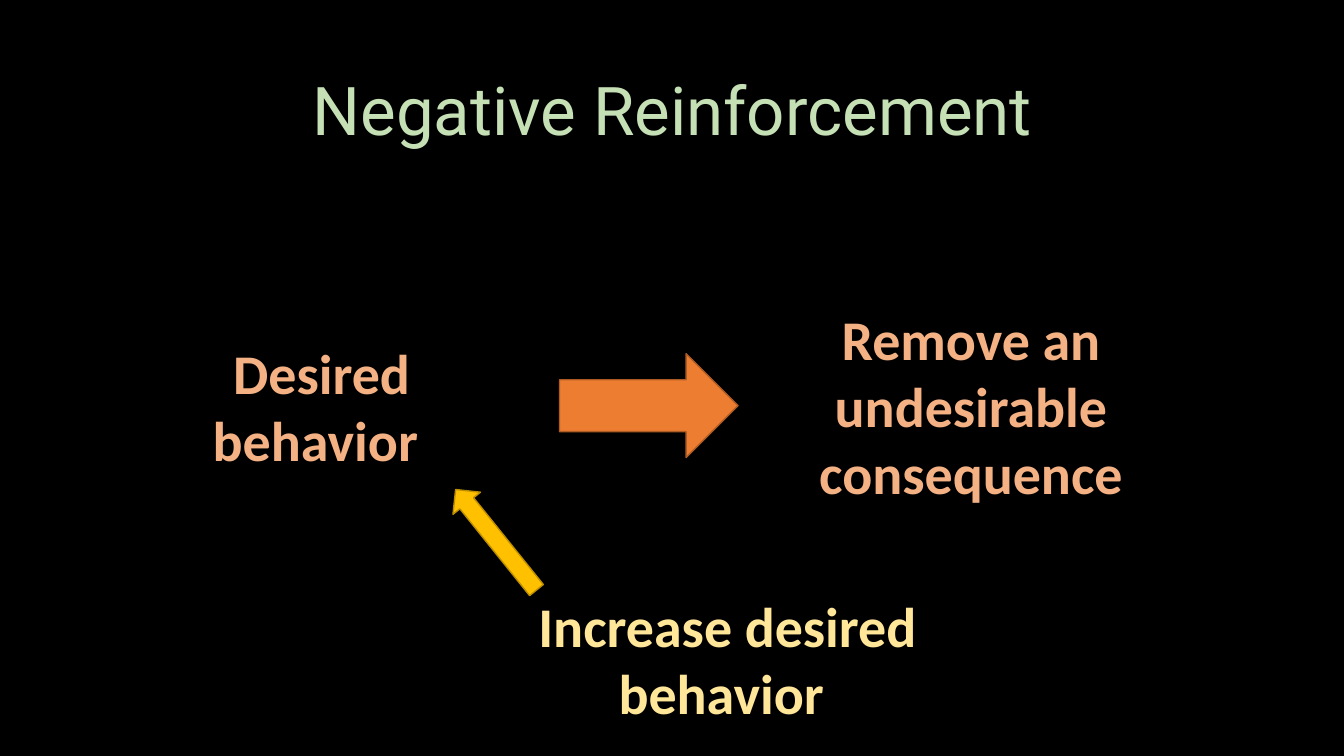
from lxml import etree
from pptx import Presentation
from pptx.dml.color import RGBColor
from pptx.enum.shapes import MSO_SHAPE
from pptx.enum.text import MSO_ANCHOR, MSO_AUTO_SIZE, PP_ALIGN
from pptx.oxml.ns import qn
from pptx.util import Inches, Pt

CENTER = PP_ALIGN.CENTER
MIDDLE = MSO_ANCHOR.MIDDLE
RIGHT_ARROW = MSO_SHAPE.RIGHT_ARROW
TITLE_ONLY = 5
BLACK = "000000"

TITLE = "Negative Reinforcement"
TITLE_PLACE = (0.92, 0.4, 11.5, 1.45)
TITLE_OPACITY = 60

# text, (left, top, width, height), colour
LABELS = [
    ("Desired behavior ", (1.43, 3.3, 3.52, 1.45), "F4B183"),
    ("Remove an undesirable consequence", (7.87, 2.96, 3.52, 2.12), "F4B183"),
    ("Increase desired behavior ", (5.12, 5.81, 4.19, 1.45), "FFE699"),
]

# (left, top, width, height), rotation, fill, line
ARROWS = [
    ((5.55, 3.51, 1.77, 1.03), 0, "ED7D31", "AF5C24"),
    ((4.28, 5.18, 1.28, 0.35), 231.2, "FFC000", "BD8E00"),
]


def paint(fill, color):
    fill.solid()
    fill.fore_color.rgb = RGBColor.from_string(color)


def inches(place):
    return [Inches(length) for length in place]


def write(shape, text, font_name, size, color, bold):
    frame = shape.text_frame
    frame.word_wrap = True
    frame.vertical_anchor = MIDDLE
    para = frame.paragraphs[0]
    para.text = text
    para.alignment = CENTER
    font = para.runs[0].font
    font.name = font_name
    font.size = Pt(size)
    font.bold = bold
    font.color.rgb = RGBColor.from_string(color)


def add_title(page):
    title = page.shapes.title
    title.left, title.top, title.width, title.height = inches(TITLE_PLACE)
    paint(title.fill, BLACK)
    color = title.fill._xPr.find(qn("a:solidFill"))[0]
    etree.SubElement(color, qn("a:alpha"), val=str(TITLE_OPACITY * 1000))
    write(title, TITLE, "Roboto", 48, "C5E0B4", False)
    title.text_frame.paragraphs[0].line_spacing = 0.9


def add_label(page, text, place, color):
    box = page.shapes.add_textbox(*inches(place))
    write(box, text, "Calibri", 40, color, True)
    box.text_frame.auto_size = MSO_AUTO_SIZE.SHAPE_TO_FIT_TEXT


def add_arrow(page, place, rotation, fill, line):
    arrow = page.shapes.add_shape(RIGHT_ARROW, *inches(place))
    arrow.shadow.inherit = False
    arrow.rotation = rotation
    paint(arrow.fill, fill)
    paint(arrow.line.fill, line)
    arrow.line.width = Pt(1)


def main():
    deck = Presentation()
    deck.slide_width, deck.slide_height = Inches(13.33), Inches(7.5)
    page = deck.slides.add_slide(deck.slide_layouts[TITLE_ONLY])
    paint(page.background.fill, BLACK)
    add_title(page)
    for label in LABELS:
        add_label(page, *label)
    for arrow in ARROWS:
        add_arrow(page, *arrow)
    deck.save("out.pptx")


if __name__ == "__main__":
    main()
